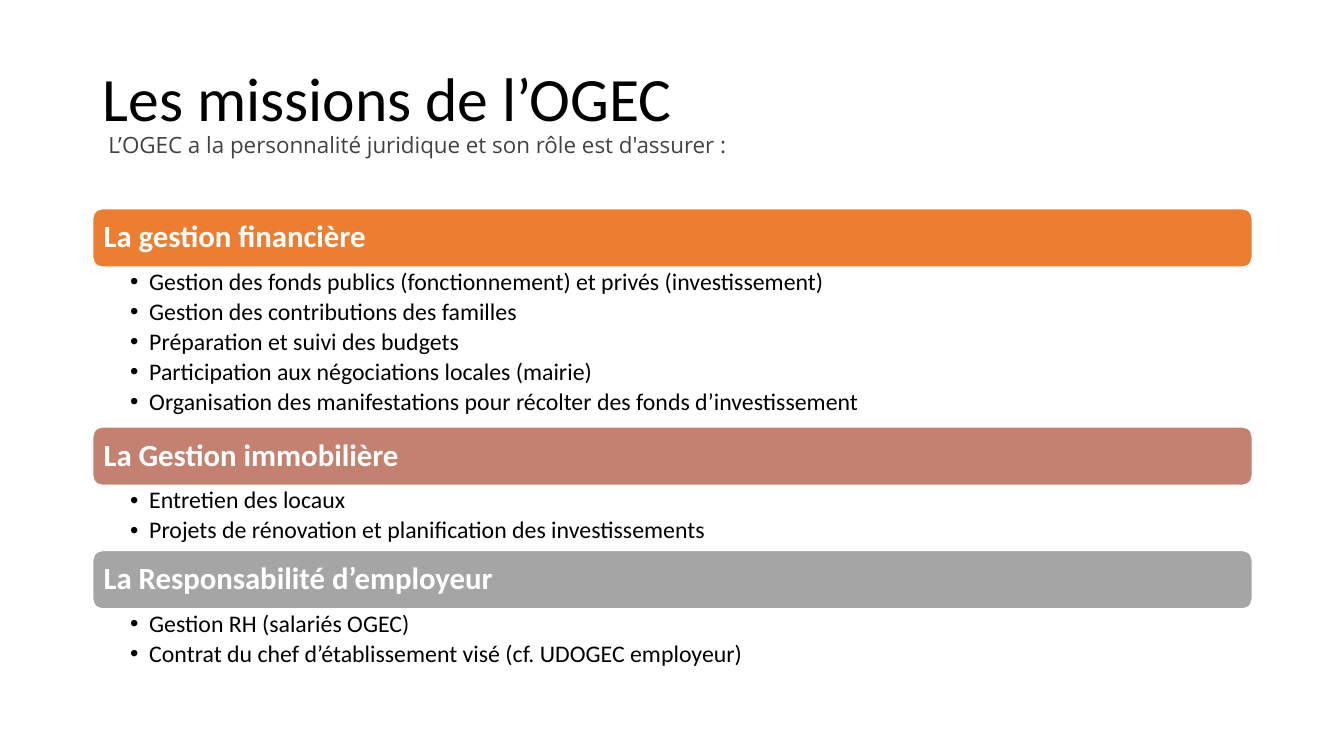
from lxml import etree
from pptx import Presentation
from pptx.dml.color import RGBColor
from pptx.enum.shapes import MSO_SHAPE
from pptx.enum.text import MSO_ANCHOR, PP_ALIGN
from pptx.oxml.ns import qn
from pptx.util import Inches, Pt

ROUNDED = MSO_SHAPE.ROUNDED_RECTANGLE
TOP, MIDDLE = MSO_ANCHOR.TOP, MSO_ANCHOR.MIDDLE
LEFT = PP_ALIGN.LEFT

COLORS = {
    "text": "000000",
    "subtitle": "424242",
    "white": "FFFFFF",
    "finance": "ED7D31",
    "property": "C48170",
    "employer": "A5A5A5",
}

MARGIN, WIDTH = 0.92, 11.5
MISSIONS_TOP = 2.07
HEADING_HEIGHT = 0.58
DUTY_HEIGHT, DUTY_PADDING = 0.313, 0.02
BULLET_INDENT = 0.19

MISSIONS = [
    ("La gestion financière", "finance", [
        "Gestion des fonds publics (fonctionnement) et privés (investissement)",
        "Gestion des contributions des familles",
        "Préparation et suivi des budgets",
        "Participation aux négociations locales (mairie)",
        "Organisation des manifestations pour récolter des fonds d’investissement",
    ]),
    ("La Gestion immobilière", "property", [
        "Entretien des locaux",
        "Projets de rénovation et planification des investissements",
    ]),
    ("La Responsabilité d’employeur", "employer", [
        "Gestion RH (salariés OGEC)",
        "Contrat du chef d’établissement visé (cf. UDOGEC employeur)",
    ]),
]


def rgb(name):
    return RGBColor.from_string(COLORS[name])


def add_text(paragraph, text, size, color="text", font="Calibri", bold=False, after=0):
    paragraph.alignment = LEFT
    paragraph.line_spacing = 0.9
    paragraph.space_after = Pt(after)
    run = paragraph.add_run()
    run.text = text
    run.font.name = font
    run.font.size = Pt(size)
    run.font.bold = bold
    run.font.color.rgb = rgb(color)


def set_frame(frame, anchor, insets):
    """Wrap the text and set its left, top, right and bottom insets."""
    frame.word_wrap = True
    frame.vertical_anchor = anchor
    (frame.margin_left, frame.margin_top,
     frame.margin_right, frame.margin_bottom) = map(Inches, insets)


def add_bullet(paragraph):
    properties = paragraph._p.get_or_add_pPr()
    properties.set("marL", str(Inches(BULLET_INDENT)))
    properties.set("indent", str(-Inches(BULLET_INDENT)))
    etree.SubElement(properties, qn("a:buFont"), typeface="Arial")
    etree.SubElement(properties, qn("a:buChar"), char="•")


def add_title(slide, left, top, width, height):
    frame = slide.shapes.add_textbox(*map(Inches, (left, top, width, height))).text_frame
    set_frame(frame, MIDDLE, (0.1, 0.05, 0.1, 0.05))
    title = frame.paragraphs[0]
    add_text(title, "Les missions de l’OGEC", 44)
    title.add_line_break()
    add_text(title, " L’OGEC a la personnalité juridique et son rôle est d'assurer :",
             16, color="subtitle", font="Open Sans")


def add_heading(slide, text, color, left, top, width, height):
    bar = slide.shapes.add_shape(ROUNDED, *map(Inches, (left, top, width, height)))
    bar.shadow.inherit = False
    bar.fill.solid()
    bar.fill.fore_color.rgb = rgb(color)
    bar.line.color.rgb = rgb("white")
    bar.line.width = Pt(1)
    set_frame(bar.text_frame, MIDDLE, (0.08, 0.05, 0.08, 0.05))
    add_text(bar.text_frame.paragraphs[0], text, 22, color="white", bold=True)


def add_duties(slide, duties, left, top, width, height):
    frame = slide.shapes.add_textbox(*map(Inches, (left, top, width, height))).text_frame
    set_frame(frame, TOP, (0.37, 0.03, 0.17, 0.03))
    for index, duty in enumerate(duties):
        paragraph = frame.add_paragraph() if index else frame.paragraphs[0]
        paragraph.level = 1
        add_text(paragraph, duty, 17, after=3)
        add_bullet(paragraph)


def add_missions(slide, left, top, width):
    """Stack each heading and its duties, without gaps, from the top down."""
    for heading, color, duties in MISSIONS:
        add_heading(slide, heading, color, left, top, width, HEADING_HEIGHT)
        top += HEADING_HEIGHT
        duties_height = DUTY_PADDING + DUTY_HEIGHT * len(duties)
        add_duties(slide, duties, left, top, width, duties_height)
        top += duties_height


def main():
    deck = Presentation()
    deck.slide_width, deck.slide_height = Inches(13.33), Inches(7.5)
    slide = deck.slides.add_slide(deck.slide_layouts[6])
    add_title(slide, MARGIN, 0.4, WIDTH, 1.45)
    add_missions(slide, MARGIN, MISSIONS_TOP, WIDTH)
    deck.save("out.pptx")


if __name__ == "__main__":
    main()
